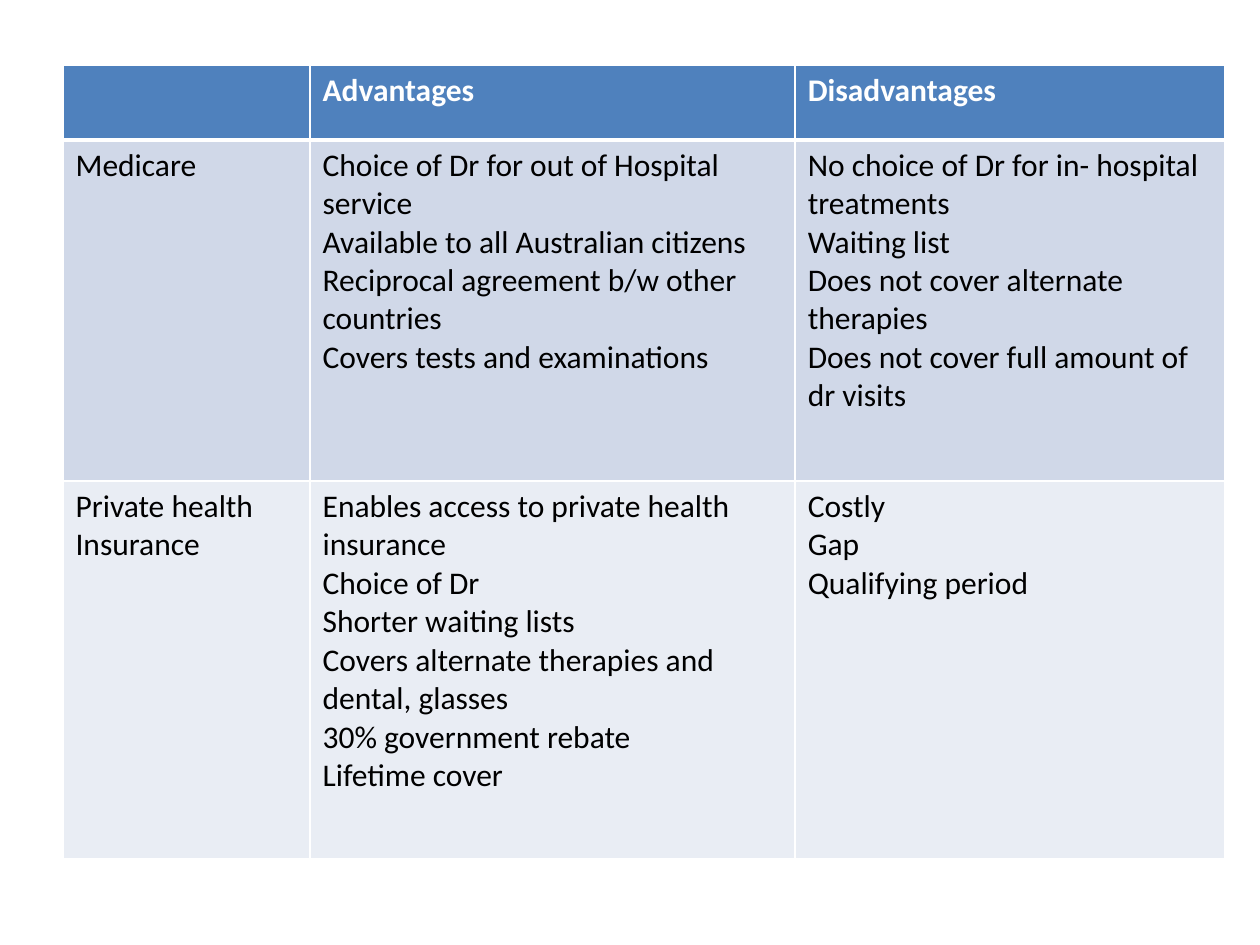
from lxml.etree import SubElement
from pptx import Presentation
from pptx.dml.color import RGBColor
from pptx.oxml.ns import qn
from pptx.util import Cm, Pt

HUES = {"head": "4F81BD", "odd": "D0D8E8", "even": "E9EDF4",
        "line": "FFFFFF", "light": "FFFFFF", "dark": "000000"}
BASE = {"name": "Calibri", "size": Pt(18)}
COLS = [4.98, 9.78, 8.66]
ROWS = [1.5, 6.88, 7.62]
CELLS = [
    [[], ["Advantages"], ["Disadvantages"]],
    [
        ["Medicare"],
        ["Choice of Dr for out of Hospital service",
         "Available to all Australian citizens",
         "Reciprocal agreement b/w other countries",
         "Covers tests and examinations"],
        ["No choice of Dr for in- hospital treatments",
         "Waiting list",
         "Does not cover alternate therapies",
         "Does not cover full amount of dr visits"],
    ],
    [
        ["Private health", "Insurance"],
        ["Enables access to private health insurance",
         "Choice of Dr",
         "Shorter waiting lists",
         "Covers alternate therapies and dental, glasses",
         "30% government rebate",
         "Lifetime cover"],
        ["Costly", "Gap", "Qualifying period"],
    ],
]


def edge(cell, sides):
    props = cell._tc.get_or_add_tcPr()
    for side, width in sides.items():
        line = SubElement(props, qn(f"a:ln{side}"), w=str(Pt(width)))
        fill = SubElement(line, qn("a:solidFill"))
        SubElement(fill, qn("a:srgbClr"), val=HUES["line"])


def write(cell, lines, hue, bold):
    frame = cell.text_frame
    for num, text in enumerate(lines):
        para = frame.add_paragraph() if num else frame.paragraphs[0]
        run = para.add_run()
        run.text = text
        for key, value in {**BASE, "bold": bold}.items():
            setattr(run.font, key, value)
        run.font.color.rgb = RGBColor.from_string(HUES[hue])


def grid(slide, left, top, wide, high):
    table = slide.shapes.add_table(
        len(ROWS), len(COLS), Cm(left), Cm(top), Cm(wide), Cm(high)).table
    for col, size in zip(table.columns, COLS):
        col.width = Cm(size * wide / sum(COLS))
    for row, size in zip(table.rows, ROWS):
        row.height = Cm(size * high / sum(ROWS))
    for r, (band, row) in enumerate(zip(("head", "odd", "even"), CELLS)):
        head = band == "head"
        for c, lines in enumerate(row):
            cell = table.cell(r, c)
            edge(cell, {"L": 1, "R": 1, "T": 3 if r == 1 else 1,
                        "B": 3 if head else 1})
            cell.fill.solid()
            cell.fill.fore_color.rgb = RGBColor.from_string(HUES[band])
            write(cell, lines, "light" if head else "dark", head)


def main():
    deck = Presentation()
    deck.slide_width, deck.slide_height = Cm(25.4), Cm(19.05)
    slide = deck.slides.add_slide(deck.slide_layouts[6])
    grid(slide, 1.27, 1.32, sum(COLS), sum(ROWS))
    deck.save("out.pptx")


if __name__ == "__main__":
    main()
